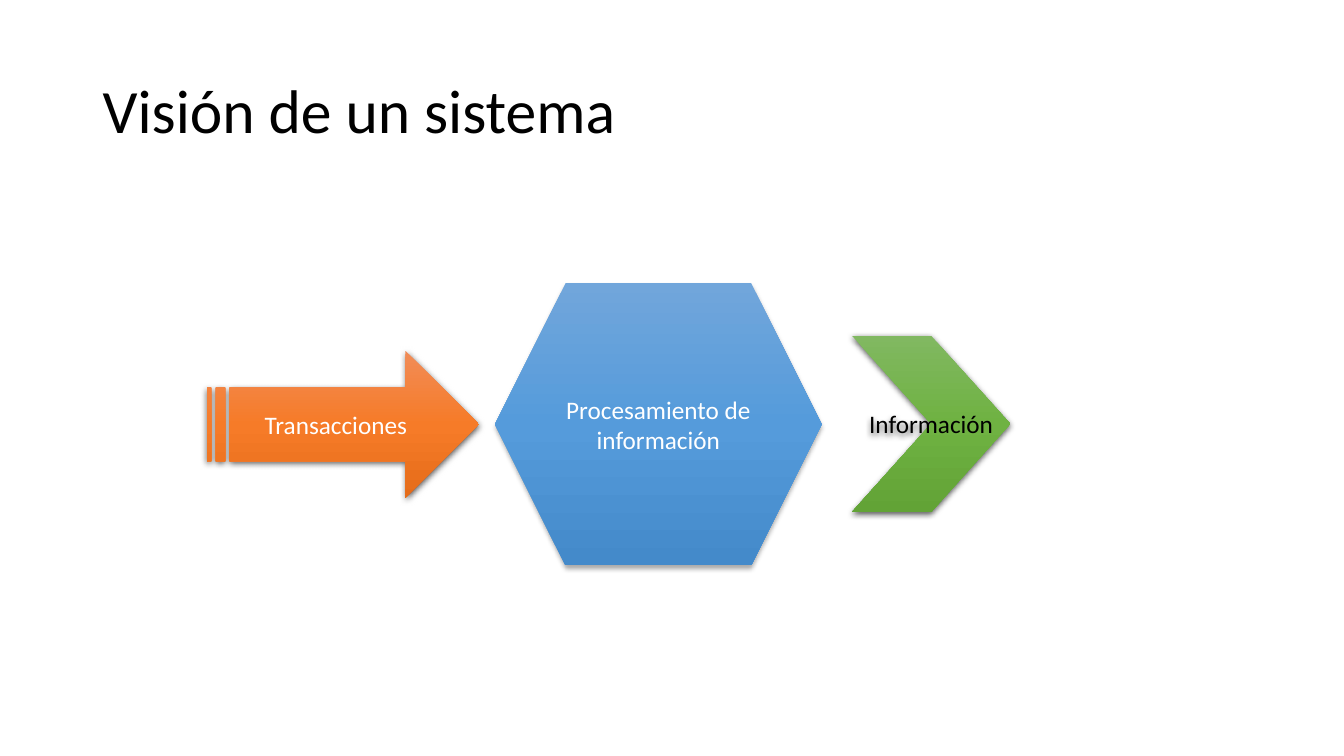
"""Build the slide "Visión de un sistema": input, process and output of a system."""
from dataclasses import dataclass

from lxml import etree
from pptx import Presentation
from pptx.dml.color import RGBColor
from pptx.enum.shapes import MSO_SHAPE
from pptx.enum.text import MSO_ANCHOR, PP_ALIGN
from pptx.oxml.ns import qn
from pptx.shapes.autoshape import Shape
from pptx.slide import Slide
from pptx.util import Emu, Pt

HEXAGON = MSO_SHAPE.HEXAGON
STRIPED_ARROW = MSO_SHAPE.STRIPED_RIGHT_ARROW
CHEVRON = MSO_SHAPE.CHEVRON
MIDDLE = MSO_ANCHOR.MIDDLE
LEFT, CENTER = PP_ALIGN.LEFT, PP_ALIGN.CENTER

PX = 9144
FONT = "Calibri"
BLACK = RGBColor(0x00, 0x00, 0x00)
WHITE = RGBColor(0xFF, 0xFF, 0xFF)
BLUES = (RGBColor(0x71, 0xA6, 0xDB), RGBColor(0x55, 0x9B, 0xDB), RGBColor(0x44, 0x8A, 0xCA))
ORANGES = (RGBColor(0xF1, 0x8C, 0x57), RGBColor(0xF6, 0x7B, 0x28), RGBColor(0xE5, 0x6C, 0x19))
GREENS = (RGBColor(0x81, 0xB8, 0x61), RGBColor(0x6F, 0xB2, 0x42), RGBColor(0x62, 0xA3, 0x36))


@dataclass(frozen=True)
class Shadow:
    """Downward shadow: opacity in percent, blur and distance in points."""
    opacity: int
    blur: float
    distance: float


@dataclass(frozen=True)
class Stage:
    """One stage of the system, with its box in px."""
    text: str
    kind: MSO_SHAPE
    box: tuple[int, int, int, int]
    colors: tuple[RGBColor, ...]
    shadow: Shadow
    text_color: RGBColor = WHITE


SOFT = Shadow(32, 3.5, 2.2)
STRONG = Shadow(63, 4.5, 1.5)
TITLE_BOX = (92, 40, 1150, 145)
STAGES = (
    Stage("Procesamiento de información", HEXAGON, (491, 281, 324, 280), BLUES, SOFT),
    Stage("Transacciones", STRIPED_ARROW, (205, 348, 270, 146), ORANGES, STRONG),
    Stage("Información", CHEVRON, (845, 333, 157, 175), GREENS, STRONG, BLACK),
)


def px(*lengths: int) -> list[Emu]:
    """Turn px lengths into EMU."""
    return [Emu(n * PX) for n in lengths]


def add_color(parent: etree._Element, color: RGBColor) -> etree._Element:
    """Append an RGB colour element and return it."""
    return etree.SubElement(parent, qn("a:srgbClr"), val=str(color))


def set_text(sp: Shape, text: str, *, size: int = 18, color: RGBColor = WHITE,
             align: PP_ALIGN = CENTER, spacing: float = 1.0) -> None:
    """Write one wrapped, vertically centred paragraph."""
    tf = sp.text_frame
    tf.word_wrap = True
    tf.vertical_anchor = MIDDLE
    p = tf.paragraphs[0]
    p.alignment = align
    p.line_spacing = spacing
    r = p.add_run()
    r.text = text
    r.font.name = FONT
    r.font.size = Pt(size)
    r.font.color.rgb = color


def set_gradient(sp: Shape, colors: tuple[RGBColor, ...]) -> None:
    """Fill from top to bottom with evenly spaced colours."""
    sp.fill.gradient()
    sp.fill.gradient_angle = 270
    stops = sp.element.spPr.find(qn("a:gradFill")).find(qn("a:gsLst"))
    for stop in list(stops):
        stops.remove(stop)
    for i, color in enumerate(colors):
        pos = 100000 * i // (len(colors) - 1)
        add_color(etree.SubElement(stops, qn("a:gs"), pos=str(pos)), color)


def set_shadow(sp: Shape, shadow: Shadow) -> None:
    """Replace the theme shadow with the given one."""
    sp.shadow.inherit = False
    effects = sp.element.spPr.find(qn("a:effectLst"))
    outer = etree.SubElement(
        effects, qn("a:outerShdw"), blurRad=str(Pt(shadow.blur)),
        dist=str(Pt(shadow.distance)), dir="5400000", algn="ctr", rotWithShape="0")
    etree.SubElement(add_color(outer, BLACK), qn("a:alpha"), val=str(shadow.opacity * 1000))


def add_stage(s: Slide, stage: Stage) -> None:
    """Draw one stage of the system."""
    sp = s.shapes.add_shape(stage.kind, *px(*stage.box))
    set_gradient(sp, stage.colors)
    sp.line.fill.background()
    set_shadow(sp, stage.shadow)
    set_text(sp, stage.text, color=stage.text_color)


def main() -> None:
    """Build and save the presentation."""
    prs = Presentation()
    prs.slide_width, prs.slide_height = px(1333, 750)
    s = prs.slides.add_slide(prs.slide_layouts[6])
    title = s.shapes.add_textbox(*px(*TITLE_BOX))
    set_text(title, "Visión de un sistema", size=44, color=BLACK, align=LEFT, spacing=0.9)
    for stage in STAGES:
        add_stage(s, stage)
    prs.save("out.pptx")


if __name__ == "__main__":
    main()
